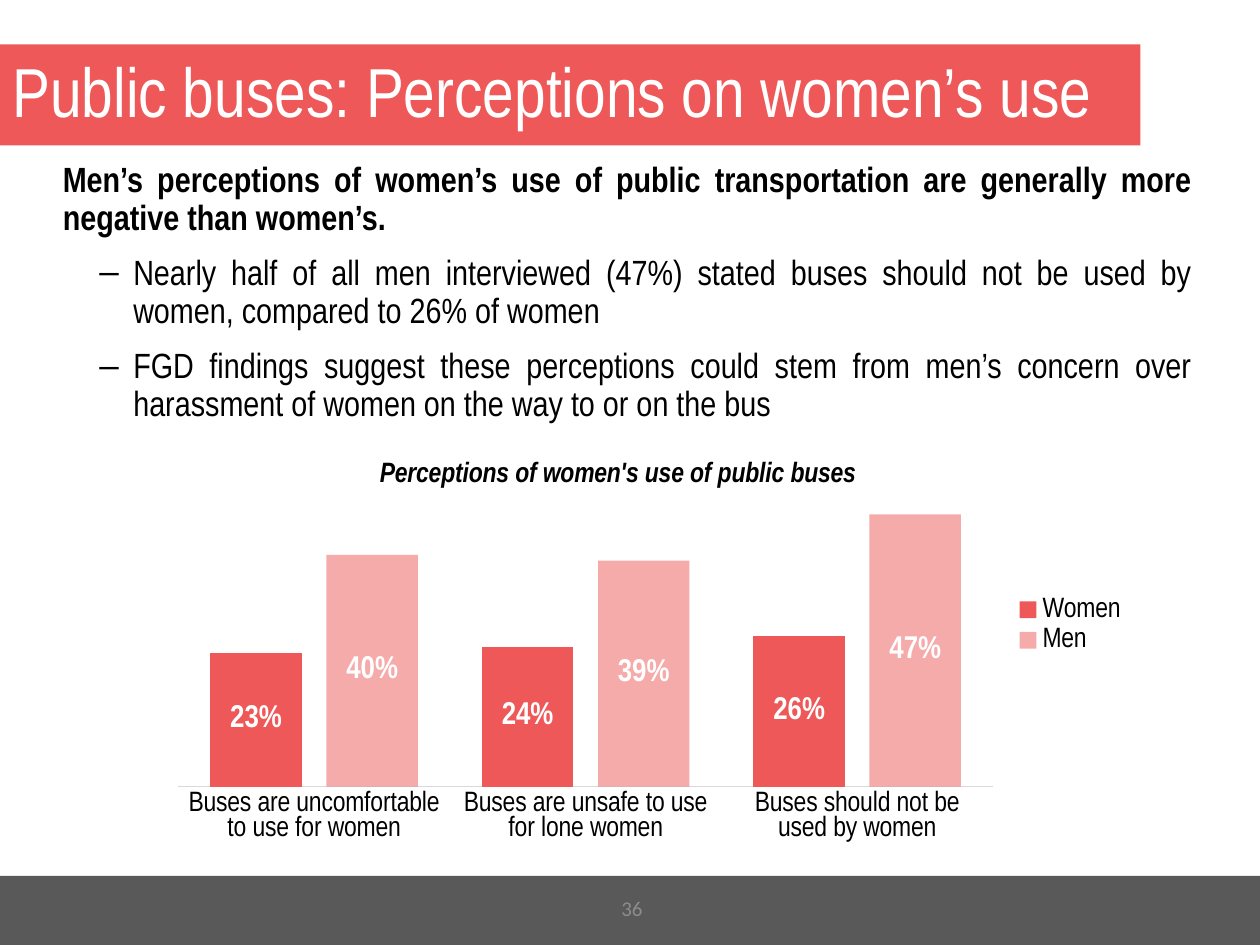
import pptx
import pptx.chart.data
import pptx.dml.color
import pptx.enum.chart
import pptx.enum.shapes
import pptx.enum.text
import pptx.oxml
import pptx.oxml.ns
import pptx.util
import lxml.etree

Pt = pptx.util.Pt
qn = pptx.oxml.ns.qn
hues = {"red": "EE5859", "bar": "EE5858", "gray": "595959", "line": "D9D9D9",
        "page": "8C8C8C", "black": "000000", "white": "FFFFFF"}
face = "Arial Narrow"

deck = pptx.Presentation()
deck.slide_width = pptx.util.Inches(10)
deck.slide_height = pptx.util.Inches(7.5)
wide, high = deck.slide_width, deck.slide_height
slide = deck.slides.add_slide(deck.slide_layouts[6])


def style(font, size, hue, bold=False, name=face):
    font.name, font.size, font.bold = name, Pt(size), bold
    font.color.rgb = pptx.dml.color.RGBColor.from_string(hues[hue])


def place(part, spot, **marks):
    for old in part.findall(qn("c:layout")):
        part.remove(old)
    box = lxml.etree.Element(qn("c:layout"))
    hand = lxml.etree.SubElement(box, qn("c:manualLayout"))
    for tag, val in marks.items():
        lxml.etree.SubElement(hand, qn("c:" + tag)).set("val", str(val))
    part.insert(spot, box)


bands = []
for top, width, height, hue in [(0.927, 1, 0.073, "gray"), (0.047, 0.905, 0.107, "red")]:
    band = slide.shapes.add_shape(
        pptx.enum.shapes.MSO_SHAPE.RECTANGLE,
        0, int(top * high), int(width * wide), int(height * high))
    band.shadow.inherit = False
    band.fill.solid()
    band.fill.fore_color.rgb = pptx.dml.color.RGBColor.from_string(hues[hue])
    band.line.fill.background()
    bands.append(band)

frame = bands[1].text_frame
frame.word_wrap = True
frame.vertical_anchor = pptx.enum.text.MSO_ANCHOR.MIDDLE
para = frame.paragraphs[0]
para.alignment = pptx.enum.text.PP_ALIGN.LEFT
para.line_spacing = 0.9
run = para.add_run()
run.text = "Public buses: Perceptions on women’s use"
style(run.font, 39.6, "white")

points = [
    ("Men’s perceptions of women’s use of public transportation are generally more negative than women’s.", False),
    ("Nearly half of all men interviewed (47%) stated buses should not be used by women, compared to 26% of women", True),
    ("FGD findings suggest these perceptions could stem from men’s concern over harassment of women on the way to or on the bus", True),
]
body = slide.shapes.add_textbox(
    int(0.04 * wide), int(0.165 * high), int(0.916 * wide), int(0.259 * high))
frame = body.text_frame
frame.word_wrap = True
for row, (words, dash) in enumerate(points):
    para = frame.add_paragraph() if row else frame.paragraphs[0]
    para.alignment = pptx.enum.text.PP_ALIGN.JUSTIFY
    para.line_spacing = 0.9
    if row:
        para.space_before = Pt(10)
    if dash:
        props = para._p.get_or_add_pPr()
        props.set("marL", str(pptx.util.Inches(0.56)))
        props.set("indent", str(pptx.util.Inches(-0.27)))
        lxml.etree.SubElement(props, qn("a:buFont")).set("typeface", "Arial")
        lxml.etree.SubElement(props, qn("a:buChar")).set("char", "–")
    run = para.add_run()
    run.text = words
    style(run.font, 20, "black", not dash)

data = pptx.chart.data.CategoryChartData(number_format="0%")
data.categories = ["Buses are uncomfortable to use for women",
                   "Buses are unsafe to use for lone women",
                   "Buses should not be used by women"]
data.add_series("Women", [0.23, 0.24, 0.26])
data.add_series("Men", [0.4, 0.39, 0.47])
chart = slide.shapes.add_chart(
    pptx.enum.chart.XL_CHART_TYPE.COLUMN_CLUSTERED,
    int(0.126 * wide), int(0.424 * high), int(0.779 * wide), int(0.475 * high), data).chart
style(chart.font, 16, "black")

chart.has_title = True
title = chart.chart_title
run = title.text_frame.paragraphs[0].add_run()
run.text = "Perceptions of women's use of public buses"
style(run.font, 16, "black", True)
run.font.italic = True
place(title._element, 1, xMode="edge", yMode="edge", x=0.22, y=0.12)
place(chart._chartSpace.chart.plotArea, 0, layoutTarget="inner",
      xMode="edge", yMode="edge", x=0.02, y=0.15, w=0.83, h=0.71)

chart.has_legend = True
chart.legend.position = pptx.enum.chart.XL_LEGEND_POSITION.RIGHT
chart.legend.include_in_layout = False
style(chart.legend.font, 16, "black")

axis = chart.category_axis
axis.major_tick_mark = pptx.enum.chart.XL_TICK_MARK.NONE
axis.format.line.width = Pt(0.75)
axis.format.line.color.rgb = pptx.dml.color.RGBColor.from_string(hues["line"])
style(axis.tick_labels.font, 16, "black")
scale = chart.value_axis
scale.visible = False
scale.has_major_gridlines = False
scale.minimum_scale, scale.maximum_scale = 0, 0.55

plot = chart.plots[0]
plot.gap_width, plot.overlap = 70, -27
plot.vary_by_categories = False
for group, alpha in zip(plot.series, [100, 50]):
    fill = group.format.fill
    fill.solid()
    fill.fore_color.rgb = pptx.dml.color.RGBColor.from_string(hues["bar"])
    if alpha < 100:
        tint = group._element.find(".//" + qn("a:srgbClr"))
        lxml.etree.SubElement(tint, qn("a:alpha")).set("val", str(alpha * 1000))
    tags = group.data_labels
    tags.show_value = True
    tags.number_format, tags.number_format_is_linked = "0%", False
    tags.position = pptx.enum.chart.XL_LABEL_POSITION.CENTER
    style(tags.font, 18, "white", True)

page = slide.shapes.add_textbox(
    int(0.389 * wide), int(0.935 * high), int(0.225 * wide), int(0.053 * high))
frame = page.text_frame
frame.word_wrap = True
frame.vertical_anchor = pptx.enum.text.MSO_ANCHOR.MIDDLE
para = frame.paragraphs[0]
para.alignment = pptx.enum.text.PP_ALIGN.CENTER
run = para.add_run()
run.text = "36"
style(run.font, 12, "page", name="Calibri")

deck.save("out.pptx")
